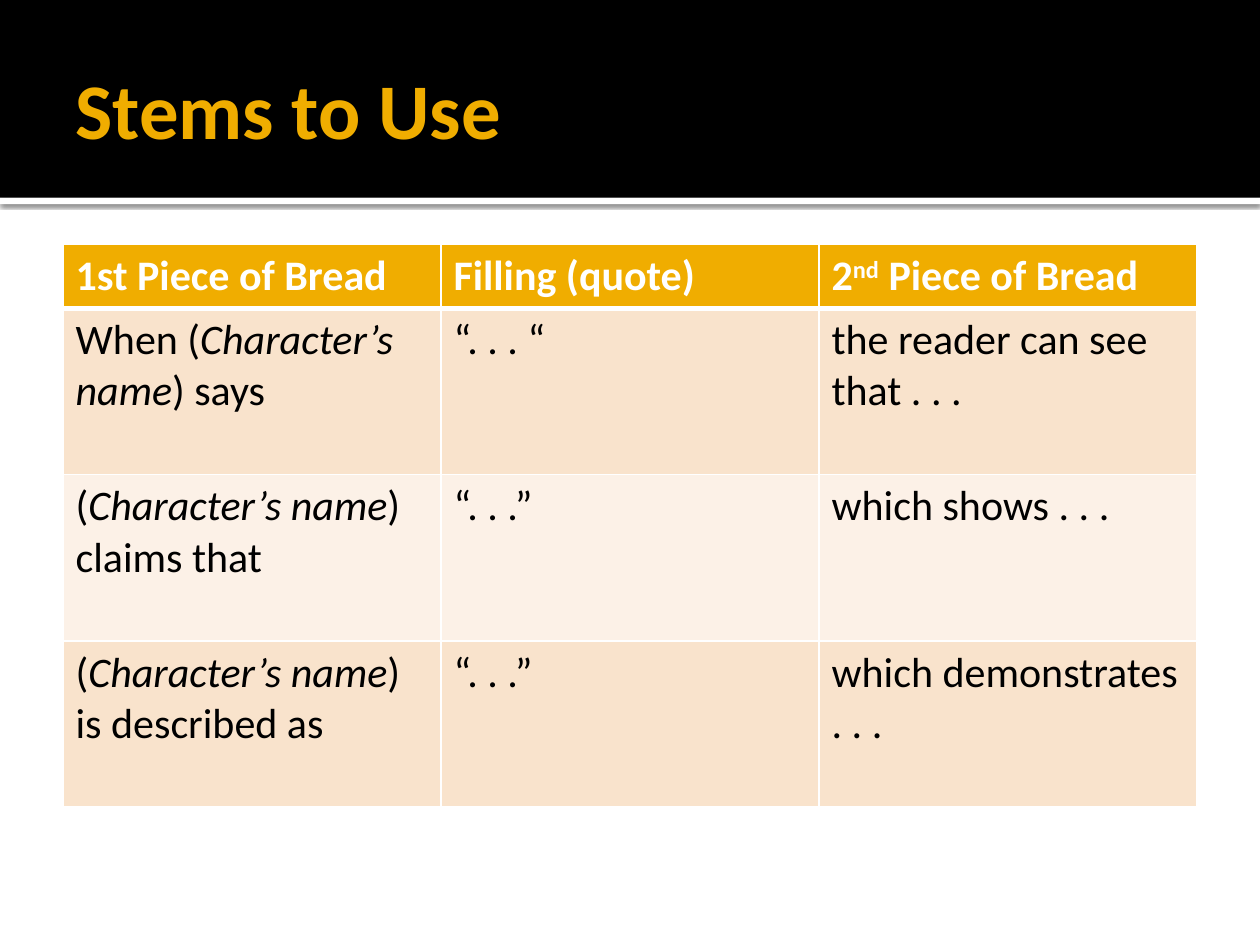
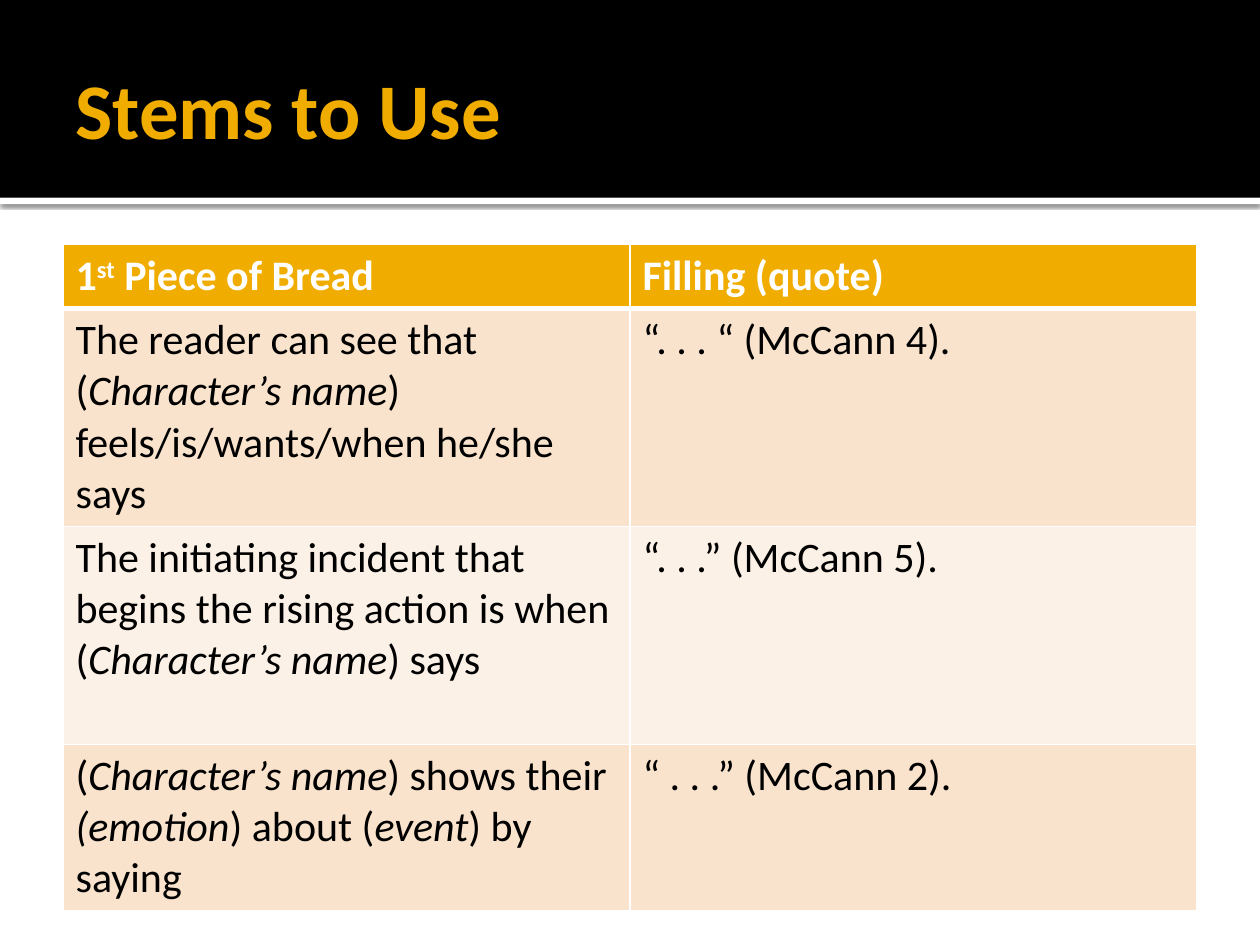
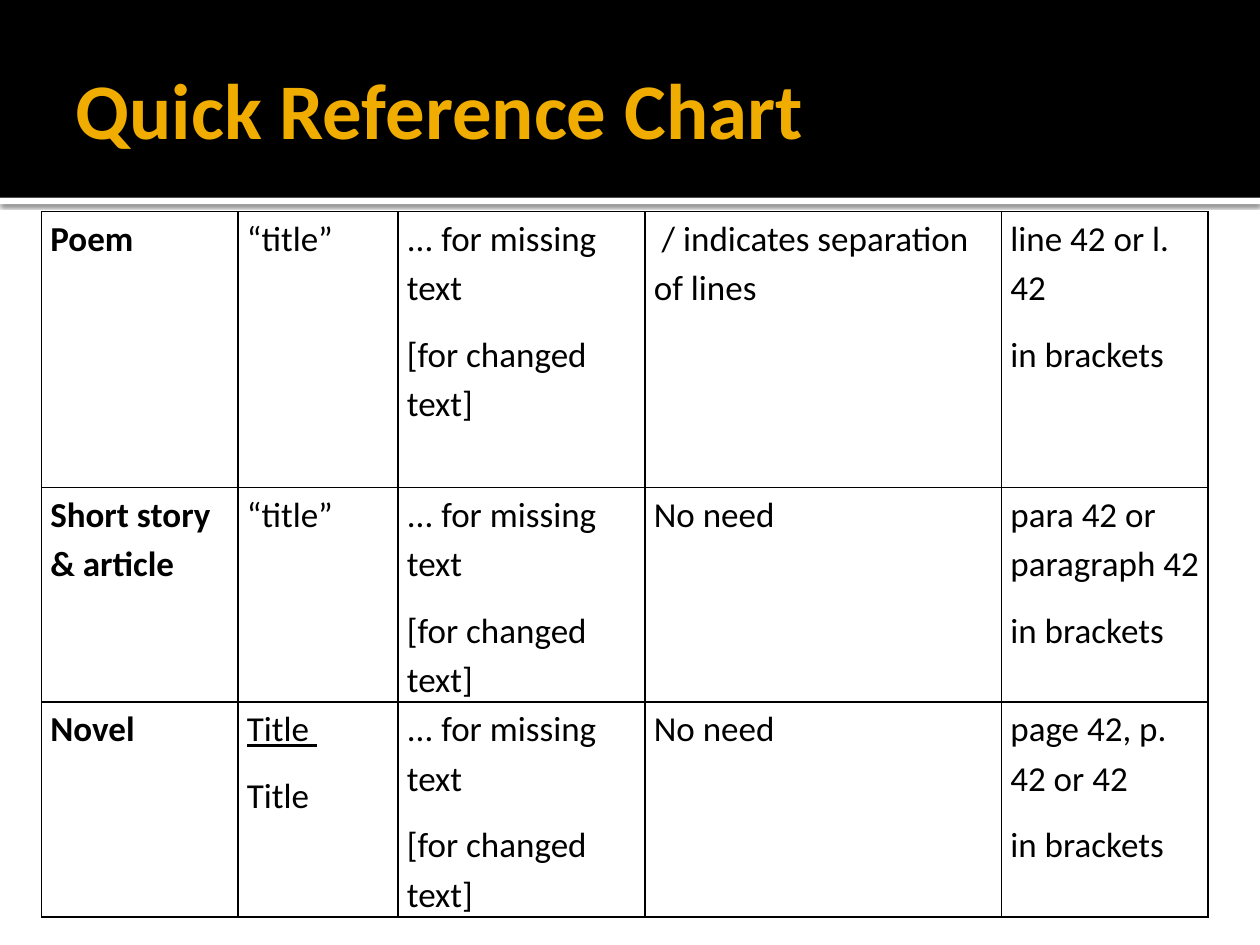
from lxml import etree
from pptx import Presentation
from pptx.dml.color import RGBColor
from pptx.enum.shapes import MSO_SHAPE
from pptx.enum.text import MSO_ANCHOR, PP_ALIGN
from pptx.oxml import parse_xml
from pptx.oxml.ns import nsdecls, qn
from pptx.util import Inches, Pt

RECT = MSO_SHAPE.RECTANGLE
MIDDLE = MSO_ANCHOR.MIDDLE
LEFT = PP_ALIGN.LEFT

FONT = "Calibri"
COLORS = {
    "black": "000000",
    "white": "FFFFFF",
    "gold": "F0AD00",
    "peach": "F9E3CC",
    "cream": "FCF1E7",
}

NAME = "(|*Character’s name|)"
BREAD = [
    ["1st Piece of Bread", "Filling (quote)", "2|^nd| Piece of Bread"],
    [f"When {NAME} says", "“. . . “", "the reader can see that . . ."],
    [f"{NAME} claims that", "“. . .”", "which shows . . ."],
    [f"{NAME} is described as", "“. . .”", "which demonstrates . . ."],
]
QUOTES = [
    ["1|^st| Piece of Bread", "Filling (quote)"],
    [f"The reader can see that {NAME} feels/is/wants/when he/she says",
     "“. . . “ (McCann 4)."],
    [f"The initiating incident that begins the rising action is when {NAME} says",
     "“. . .” (McCann 5)."],
    [f"{NAME} shows their |*(emotion|) about (|*event|) by saying",
     "“ . . .” (McCann 2)."],
]
EDITS = "... for missing text\n[for changed text]"
GUIDE = [
    ["Poem", "“title”", EDITS, " / indicates separation of lines",
     "line 42 or l. 42\nin brackets"],
    ["Short story & article", "“title”", EDITS, "No need",
     "para 42 or paragraph 42\nin brackets"],
    ["Novel", "_Title \nTitle", EDITS, "No need",
     "page 42, p. 42 or 42\nin brackets"],
]


def rgb(name):
    return RGBColor.from_string(COLORS[name])


class Deck:
    def __init__(self):
        self.prs = Presentation()
        self.prs.slide_width = Inches(10)
        self.prs.slide_height = Inches(7.5)
        self.layout = self.prs.slide_layouts[5]
        self.slide = None

    def start(self, title):
        first = self.slide is None
        self.slide = self.prs.slides.add_slide(self.layout)
        if first:
            self.share(self.band(0, 1.57, "black"))
            strip = self.band(1.57, 0.05, "white")
            self.shade(strip)
            self.share(strip)
        self.title(title)

    def band(self, top, height, color):
        shape = self.slide.shapes.add_shape(
            RECT, 0, Inches(top), Inches(10), Inches(height))
        shape.fill.solid()
        shape.fill.fore_color.rgb = rgb(color)
        shape.line.fill.background()
        shape.shadow.inherit = False
        return shape

    def shade(self, shape):
        """Cast a soft shadow straight down."""
        effects = shape._element.spPr.find(qn("a:effectLst"))
        shadow = etree.SubElement(
            effects, qn("a:outerShdw"), blurRad=str(Pt(2.5)),
            dist=str(Pt(0.8)), dir="5400000", algn="t", rotWithShape="0")
        color = etree.SubElement(shadow, qn("a:srgbClr"), val=COLORS["black"])
        etree.SubElement(color, qn("a:alpha"), val="60000")

    def share(self, shape):
        """Move a shape to the back of the layout, so every slide shows it."""
        self.layout.shapes._spTree.insert(2, shape._element)

    def title(self, text):
        box = self.slide.shapes.title
        box.left, box.top = Inches(0.5), Inches(0.17)
        box.width, box.height = Inches(9), Inches(1.37)
        frame = box.text_frame
        frame.vertical_anchor = MIDDLE
        frame.margin_left = Inches(0.1)
        frame.margin_right = frame.margin_top = frame.margin_bottom = Inches(0.05)
        frame.text = text
        para = frame.paragraphs[0]
        para.alignment = LEFT
        self.style(para, 45, "gold", True)

    def style(self, para, size, color, bold):
        font = para.font
        font.name, font.size, font.bold = FONT, Pt(size), bold
        font.color.rgb = rgb(color)

    def add_runs(self, para, text):
        """Add runs split at |; a leading * is italic, _ underlined, ^ raised."""
        for part in text.split("|"):
            run = para.add_run()
            run.text = part.lstrip("*_^")
            if part.startswith("*"):
                run.font.italic = True
            elif part.startswith("_"):
                run.font.underline = True
            elif part.startswith("^"):
                run.font._element.set("baseline", "30000")

    def edge(self, cell, color, top=1, bottom=1):
        for side, width in zip("LRTB", (1, 1, top, bottom)):
            cell._tc.get_or_add_tcPr().append(parse_xml(
                f'<a:ln{side} {nsdecls("a")} w="{Pt(width)}"><a:solidFill>'
                f'<a:srgbClr val="{COLORS[color]}"/></a:solidFill></a:ln{side}>'))

    def grid(self, rows, left, top, widths, heights):
        frame = self.slide.shapes.add_table(
            len(rows), len(widths), Inches(left), Inches(top),
            Inches(sum(widths)), Inches(sum(heights)))
        table = frame.table
        for col, width in zip(table.columns, widths):
            col.width = Inches(width)
        for row, height in zip(table.rows, heights):
            row.height = Inches(height)
        return table

    def stems(self, rows, heights):
        """Table with a gold head and two body tints in turn."""
        count = len(rows[0])
        table = self.grid(rows, 0.5, 1.94, [9 / count] * count, heights)
        for r, row in enumerate(rows):
            head = r == 0
            tint = "gold" if head else ("cream", "peach")[r % 2]
            for c, text in enumerate(row):
                cell = table.cell(r, c)
                self.edge(cell, "white", 3 if r == 1 else 1, 3 if head else 1)
                cell.fill.solid()
                cell.fill.fore_color.rgb = rgb(tint)
                para = cell.text_frame.paragraphs[0]
                self.style(para, 24, "white" if head else "black", head)
                self.add_runs(para, text)

    def chart(self, rows, widths, heights):
        """Plain ruled table with a bold first column."""
        table = self.grid(rows, 0.33, 1.68, widths, heights)
        table.first_row = table.horz_banding = False
        for r, row in enumerate(rows):
            for c, text in enumerate(row):
                cell = table.cell(r, c)
                self.edge(cell, "black")
                cell.fill.background()
                cell.margin_left = cell.margin_right = Inches(0.07)
                cell.margin_top = cell.margin_bottom = 0
                frame = cell.text_frame
                for i, line in enumerate(text.split("\n")):
                    para = frame.add_paragraph() if i else frame.paragraphs[0]
                    para.line_spacing = 1.15
                    para.space_after = Pt(10)
                    self.style(para, 20, "black", c == 0)
                    self.add_runs(para, line)


def main():
    deck = Deck()
    deck.start("Stems to Use")
    deck.stems(BREAD, [0.5, 1.32, 1.32, 1.32])
    deck.start("Stems to Use")
    deck.stems(QUOTES, [0.5, 1.73, 1.73, 1.32])
    deck.start("Quick Reference Chart")
    deck.chart(GUIDE, [1.56, 1.27, 1.96, 2.83, 1.64], [2.19, 1.7, 1.7])
    deck.prs.save("out.pptx")


if __name__ == "__main__":
    main()
